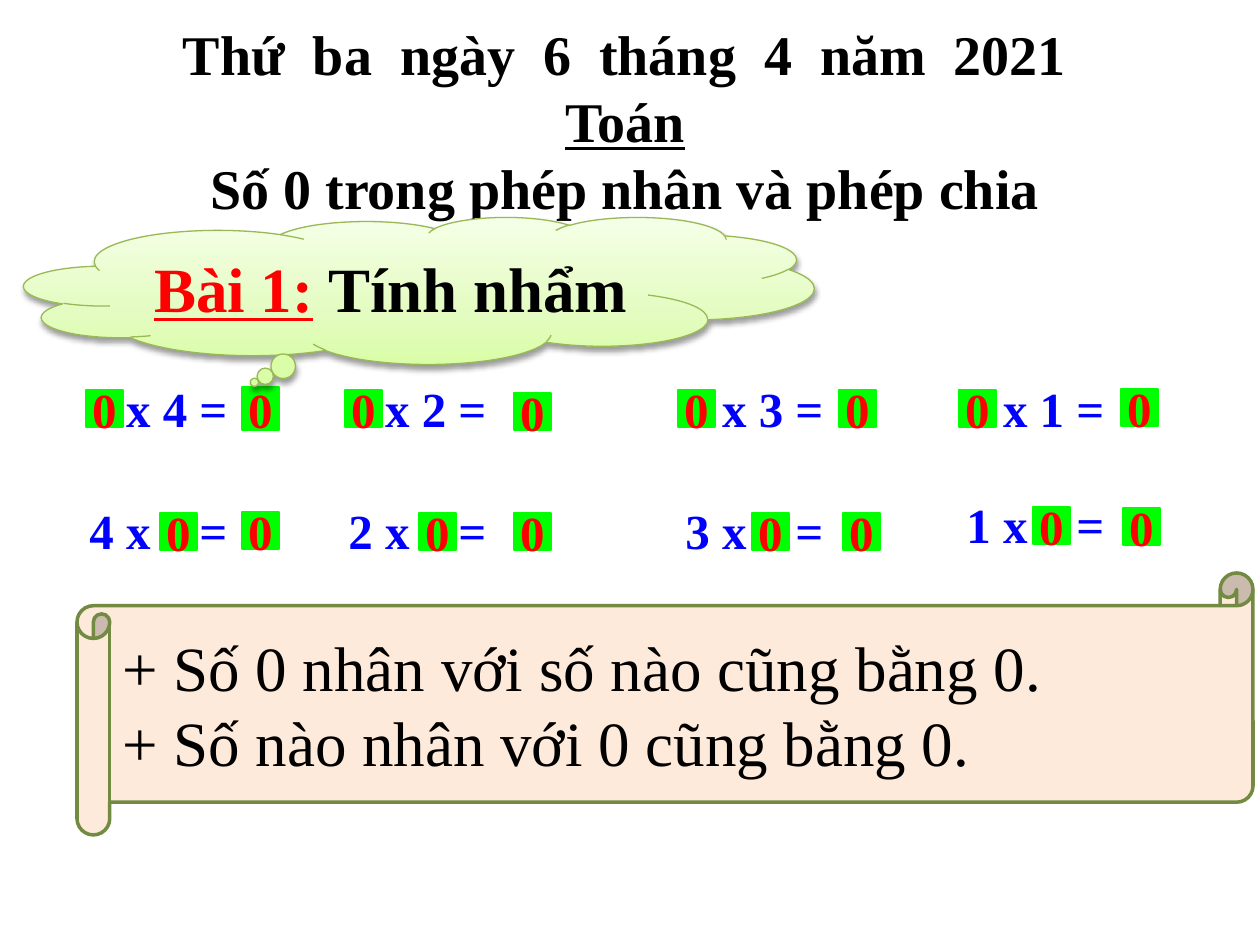
"""Build a maths lesson slide about multiplying by zero."""
from dataclasses import dataclass

from pptx import Presentation
from pptx.dml.color import RGBColor as RGB
from pptx.enum.shapes import MSO_SHAPE as SHAPE
from pptx.enum.text import MSO_ANCHOR as ANCHOR, MSO_AUTO_SIZE as FIT, PP_ALIGN as ALIGN
from pptx.oxml import parse_xml
from pptx.util import Emu, Pt


@dataclass(frozen=True)
class Theme:
    font: str = "Times New Roman"
    black: str = "000000"
    red: str = "FF0000"
    blue: str = "0000FF"
    green: str = "00FF00"
    scroll_fill: str = "FDEADA"
    scroll_line: str = "738A42"
    cloud_line: str = "98B955"
    cloud_stops: tuple = ((0, "DAFDA7"), (35, "E4FCC2"), (100, "F5FFE7"))
    title: int = 32
    big: int = 36
    sum: int = 28


T = Theme()
NS = 'xmlns:a="http://schemas.openxmlformats.org/drawingml/2006/main"'


def px(*values):
    return [Emu(round(v * 914400 / 126)) for v in values]


def add_run(p, text, size, color, bold=True, underline=False):
    r = p.add_run()
    r.text = text
    f = r.font
    f.name, f.size, f.bold, f.underline = T.font, Pt(size), bold, underline
    f.color.rgb = RGB.from_string(color)


prs = Presentation()
prs.slide_width, prs.slide_height = px(1260, 945)
s = prs.slides.add_slide(prs.slide_layouts[5])

title = s.shapes.title
title.left, title.top, title.width, title.height = px(115, 13, 1020, 217)
tf = title.text_frame
tf.auto_size, tf.word_wrap, tf.vertical_anchor = FIT.NONE, True, ANCHOR.TOP
p = tf.paragraphs[0]
p.alignment = ALIGN.CENTER
add_run(p, "Thứ  ba  ngày  6  tháng  4  năm  2021", T.title, T.black)
p.add_line_break()
add_run(p, "Toán", T.title, T.black, underline=True)
p.add_line_break()
add_run(p, "Số 0 trong phép nhân và phép chia", T.title, T.black)

# factor, left, inset of the first zero, then (left, top, height) of both answers
columns = [
    (4, 77, 9, (242, 387, 43), (242, 512, 37)),
    (2, 336, 9, (514, 393, 37), (514, 513, 37)),
    (3, 673, 5, (839, 390, 37), (843, 513, 37)),
    (1, 954, 5, (1121, 389, 37), (1123, 508, 37)),
]
zeros = []
for factor, left, inset, top_answer, low_answer in columns:
    low = 485 if factor == 1 else 491
    for text, top in ((f"0 x {factor} =", 369), (f"{factor} x 0 =", low)):
        tf = s.shapes.add_textbox(*px(left, top, 168, 78)).text_frame
        tf.word_wrap, tf.vertical_anchor = True, ANCHOR.MIDDLE
        add_run(tf.paragraphs[0], text, T.sum, T.blue)
    zeros += [(left + inset, 390, 37), (left + inset + 74, low + 22, 37),
              top_answer, low_answer]

for left, top, height in zeros:
    sp = s.shapes.add_shape(SHAPE.RECTANGLE, *px(left, top, 37, height))
    sp.shadow.inherit = False
    sp.fill.solid()
    sp.fill.fore_color.rgb = sp.line.color.rgb = RGB.from_string(T.green)
    sp.line.width = Pt(0.75)
    tf = sp.text_frame
    tf.word_wrap, tf.vertical_anchor = False, ANCHOR.MIDDLE
    p = tf.paragraphs[0]
    p.alignment = ALIGN.CENTER
    add_run(p, "0", T.sum, T.red)

scroll = s.shapes.add_shape(SHAPE.HORIZONTAL_SCROLL, *px(77, 573, 1176, 262))
scroll.shadow.inherit = False
scroll.fill.solid()
scroll.fill.fore_color.rgb = RGB.from_string(T.scroll_fill)
scroll.line.color.rgb = RGB.from_string(T.scroll_line)
scroll.line.width = Pt(2)
tf = scroll.text_frame
tf.vertical_anchor = ANCHOR.MIDDLE
rules = ("+ Số 0 nhân với số nào cũng bằng 0.", "+ Số nào nhân với 0 cũng bằng 0.")
for p, rule in zip((tf.paragraphs[0], tf.add_paragraph()), rules):
    p.alignment = ALIGN.LEFT
    add_run(p, rule, T.big, T.black, bold=False)

cloud = s.shapes.add_shape(SHAPE.CLOUD_CALLOUT, *px(24, 217, 790, 147))
cloud.line.color.rgb = RGB.from_string(T.cloud_line)
cloud.line.width = Pt(0.75)
stops = "".join(f'<a:gs pos="{pos * 1000}"><a:srgbClr val="{color}"/></a:gs>'
                for pos, color in T.cloud_stops)
spPr = cloud.element.spPr
spPr.insert(2, parse_xml(f'<a:gradFill {NS} rotWithShape="1"><a:gsLst>{stops}</a:gsLst>'
                         '<a:lin ang="16200000" scaled="1"/></a:gradFill>'))
spPr.append(parse_xml(
    f'<a:effectLst {NS}><a:outerShdw blurRad="39370" dist="20320" dir="5400000" rotWithShape="0">'
    f'<a:srgbClr val="{T.black}"><a:alpha val="38000"/></a:srgbClr></a:outerShdw></a:effectLst>'))
tf = cloud.text_frame
tf.vertical_anchor = ANCHOR.MIDDLE
p = tf.paragraphs[0]
p.alignment = ALIGN.CENTER
add_run(p, "Bài 1:", T.big, T.red, underline=True)
add_run(p, " Tính nhẩm", T.big, T.black)

prs.save("out.pptx")
